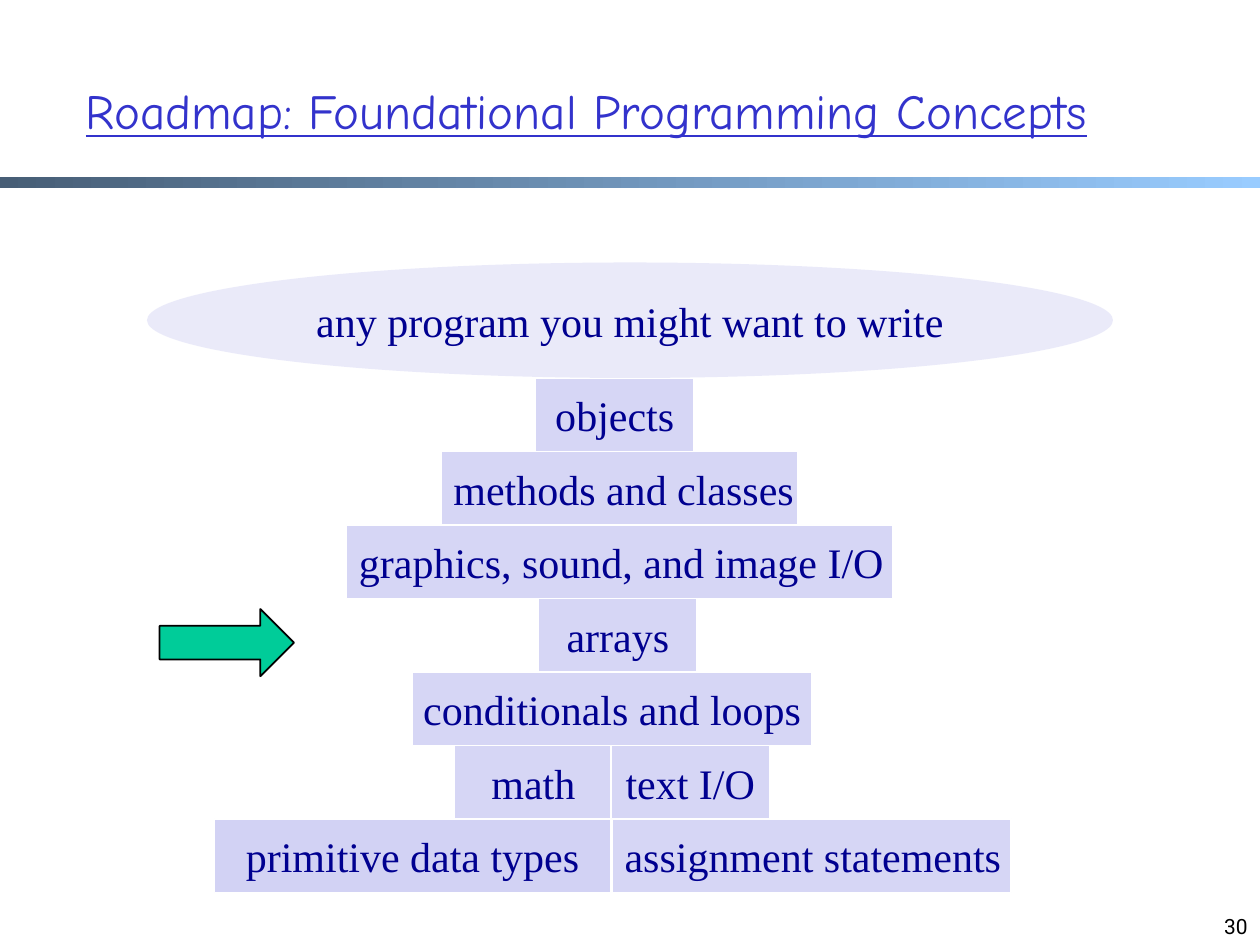
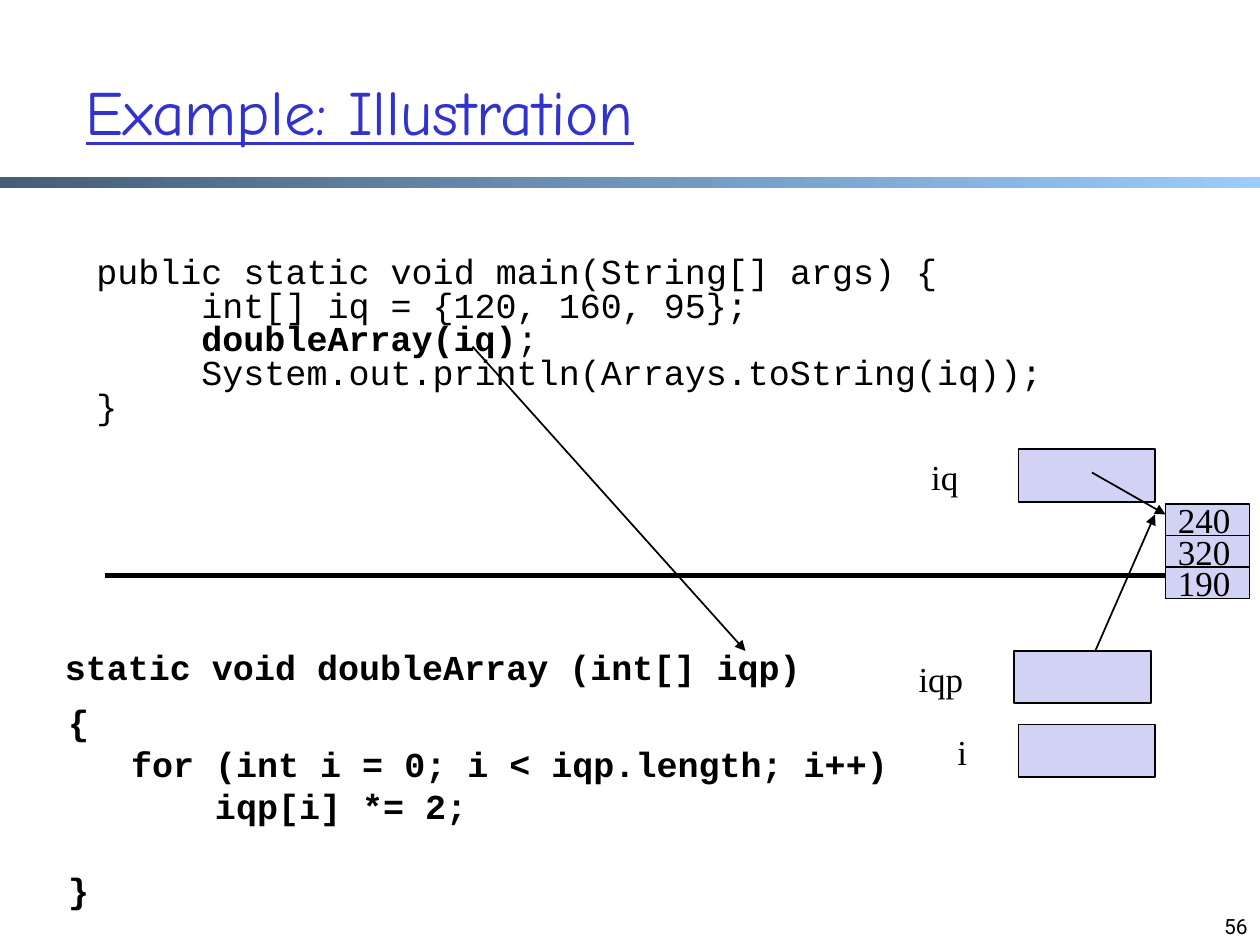
from lxml import etree
from pptx import Presentation
from pptx.dml.color import RGBColor
from pptx.enum.shapes import MSO_CONNECTOR, MSO_SHAPE
from pptx.enum.text import MSO_ANCHOR, PP_ALIGN
from pptx.oxml.ns import qn
from pptx.util import Pt

RECT, OVAL, ARROW = MSO_SHAPE.RECTANGLE, MSO_SHAPE.OVAL, MSO_SHAPE.RIGHT_ARROW
STRAIGHT = MSO_CONNECTOR.STRAIGHT
TOP, MIDDLE, BOTTOM = MSO_ANCHOR.TOP, MSO_ANCHOR.MIDDLE, MSO_ANCHOR.BOTTOM
LEFT, CENTER, RIGHT = PP_ALIGN.LEFT, PP_ALIGN.CENTER, PP_ALIGN.RIGHT

PX = 7620  # 120 px to the inch
CHAR = 20  # px taken by one character of code

WHITE = RGBColor(0xFF, 0xFF, 0xFF)
BLACK = RGBColor(0x00, 0x00, 0x00)
TITLE_BLUE = RGBColor(0x33, 0x33, 0xCC)
NAVY = RGBColor(0x00, 0x00, 0x90)
BAND_DARK = RGBColor(0x47, 0x5E, 0x76)
BAND_LIGHT = RGBColor(0x99, 0xCC, 0xFF)
LAVENDER = RGBColor(0xD6, 0xD6, 0xF5)
DEEP_LAVENDER = RGBColor(0xD2, 0xD2, 0xF4)
GREEN = RGBColor(0x00, 0xCC, 0x99)

TITLE_FONT, PAGE_FONT = "Comic Neue", "Roboto"
SERIF, MONO = "Times New Roman", "Courier New"


def add_box(slide, area, text="", size=20, font=SERIF, color=BLACK, align=LEFT,
            anchor=MIDDLE, wrap=False, fill=None, line=None, weight=1, kind=RECT):
    """Add a filled shape, or a plain text box when there is no fill."""
    area = [length * PX for length in area]
    if fill is None:
        box = slide.shapes.add_textbox(*area)
    else:
        box = slide.shapes.add_shape(kind, *area)
        box.shadow.inherit = False
        box.fill.solid()
        box.fill.fore_color.rgb = fill
        if line is None:
            box.line.fill.background()
        else:
            box.line.color.rgb = line
            box.line.width = Pt(weight)
    frame = box.text_frame
    frame.word_wrap = wrap
    frame.vertical_anchor = anchor
    if text:
        paragraph = frame.paragraphs[0]
        paragraph.text = text
        paragraph.alignment = align
        paragraph.font.size = Pt(size)
        paragraph.font.name = font
        paragraph.font.color.rgb = color
    return box


def add_line(slide, ends, weight=1, arrow=True):
    connector = slide.shapes.add_connector(STRAIGHT, *[end * PX for end in ends])
    connector.line.color.rgb = BLACK
    connector.line.width = Pt(weight)
    if arrow:
        outline = connector.line._get_or_add_ln()
        etree.SubElement(outline, qn("a:tailEnd"), type="triangle")
    etree.SubElement(connector._element.spPr, qn("a:effectLst"))


deck = Presentation()
deck.slide_width, deck.slide_height = 1200 * PX, 900 * PX

# Shared title, band and page number
for title, title_size, page in [
    ("Roadmap: Foundational Programming Concepts", 28, "30"),
    ("Example: Illustration", 36, "56"),
]:
    slide = deck.slides.add_slide(deck.slide_layouts[6])
    band = add_box(slide, (0, 169, 1200, 10), fill=BAND_DARK)
    band.fill.gradient()
    band.fill.gradient_angle = 0
    for stop, shade in zip(band.fill.gradient_stops, (BAND_DARK, BAND_LIGHT)):
        stop.color.rgb = shade
    heading = add_box(slide, (70, 30, 1090, 150), title, title_size, TITLE_FONT,
                      TITLE_BLUE, wrap=True)
    heading.text_frame.paragraphs[0].font.underline = True
    add_box(slide, (920, 840, 280, 60), page, 12, PAGE_FONT, align=RIGHT,
            anchor=BOTTOM, wrap=True)

roadmap, illustration = deck.slides

# Roadmap: the stack of concepts, one row per level
LEVEL_TOP, LEVEL_HEIGHT = 360, 70
levels = [
    [("objects", 510, 151, CENTER, LAVENDER)],
    [("methods and classes", 420, 340, LEFT, LAVENDER)],
    [("graphics, sound, and image I/O", 330, 520, LEFT, LAVENDER)],
    [("arrays", 513, 151, CENTER, LAVENDER)],
    [("conditionals and loops", 393, 380, CENTER, LAVENDER)],
    [("math", 433, 150, CENTER, LAVENDER),
     ("text I/O", 582, 151, CENTER, LAVENDER)],
    [("assignment statements", 583, 380, LEFT, LAVENDER),
     ("primitive data types", 204, 378, CENTER, DEEP_LAVENDER)],
]
for row, level in enumerate(levels):
    top = LEVEL_TOP + row * LEVEL_HEIGHT
    for concept, left, width, align, fill in level:
        add_box(roadmap, (left, top, width, LEVEL_HEIGHT), concept, 24, color=NAVY,
                align=align, fill=fill, line=WHITE, weight=0.75)

goal = add_box(roadmap, (140, 250, 920, 110), "any program you might want to write",
               24, color=NAVY, align=CENTER, fill=LAVENDER, kind=OVAL)
goal_color = goal._element.spPr.find(qn("a:solidFill")).find(qn("a:srgbClr"))
etree.SubElement(goal_color, qn("a:alpha"), val="50000")
add_box(roadmap, (152, 580, 128, 64), fill=GREEN, line=BLACK, kind=ARROW)

# Illustration: code as (indent in characters, bold part, plain part)
main_code = [
    (0, "", "public static void main(String[] args) {"),
    (5, "", "int[] iq = {120, 160, 95};"),
    (5, "doubleArray(iq)", ";"),
    (5, "", "System.out.println(Arrays.toString(iq));"),
    (0, "", "}"),
]
signature = [(0, "static void doubleArray (int[] iqp)", "")]
method_body = [
    (0, "{", ""),
    (3, "for (int i = 0; i < iqp.length; i++)", ""),
    (7, "iqp[i] *= 2;", ""),
    (0, "}", ""),
]
for area, code, pitch in [
    ((80, 240, 980, 174), main_code, 19.2),
    ((50, 609, 780, 53), signature, 24),
    ((53, 661, 830, 214), method_body, 24),
]:
    frame = add_box(illustration, area, anchor=TOP, wrap=True).text_frame
    for number, (indent, bold, plain) in enumerate(code):
        paragraph = frame.add_paragraph() if number else frame.paragraphs[0]
        paragraph.line_spacing = Pt(pitch)
        paragraph.font.size = Pt(20)
        paragraph.font.name = MONO
        paragraph.font.color.rgb = BLACK
        paragraph._p.get_or_add_pPr().set("marL", str(indent * CHAR * PX))
        for part, is_bold in ((bold, True), (plain, False)):
            if part:
                run = paragraph.add_run()
                run.text = part
                run.font.bold = is_bold
# The closing brace stands one line lower
frame.paragraphs[-1].space_before = Pt(24)

add_line(illustration, (100, 548, 1150, 548), weight=2.5, arrow=False)

# Variables: name, left of name, width of name, left and top of memory cell
for name, name_left, name_width, cell_left, cell_top in [
    ("iq", 875, 50, 970, 428),
    ("iqp", 863, 67, 966, 620),
    ("i", 900, 34, 970, 690),
]:
    add_box(illustration, (cell_left, cell_top, 130, 50),
            fill=DEEP_LAVENDER, line=BLACK)
    add_box(illustration, (name_left, cell_top, name_width, 53), name, anchor=TOP)

for row, value in enumerate(("240", "320", "190")):
    add_box(illustration, (1110, 480 + 30 * row, 80, 30), value,
            fill=DEEP_LAVENDER, line=BLACK)

# Argument to parameter, then both references to the array
for ends in [
    (450, 330, 710, 620),
    (1040, 450, 1110, 490),
    (1030, 650, 1100, 490),
]:
    add_line(illustration, ends)

# The second reference starts behind the iqp cell
cells = illustration.shapes._spTree
cells.insert(2, cells[-1])

deck.save("out.pptx")
